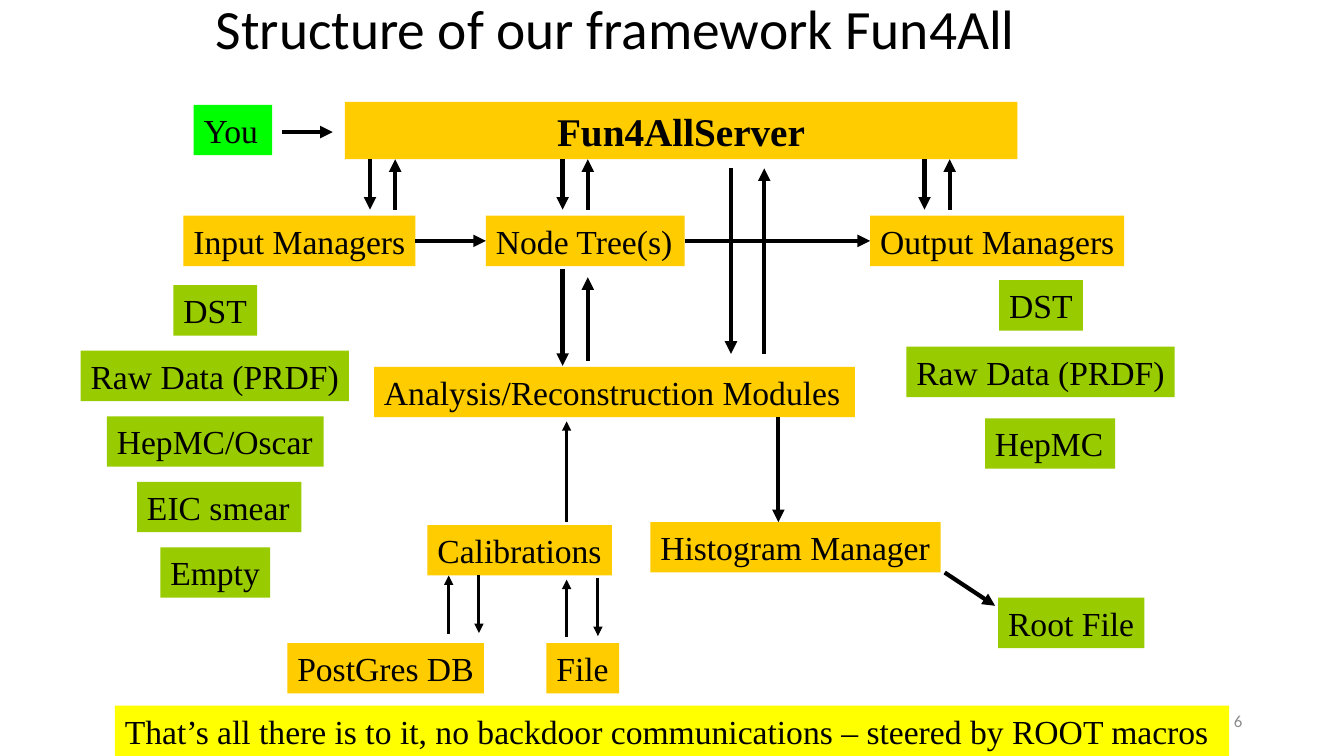
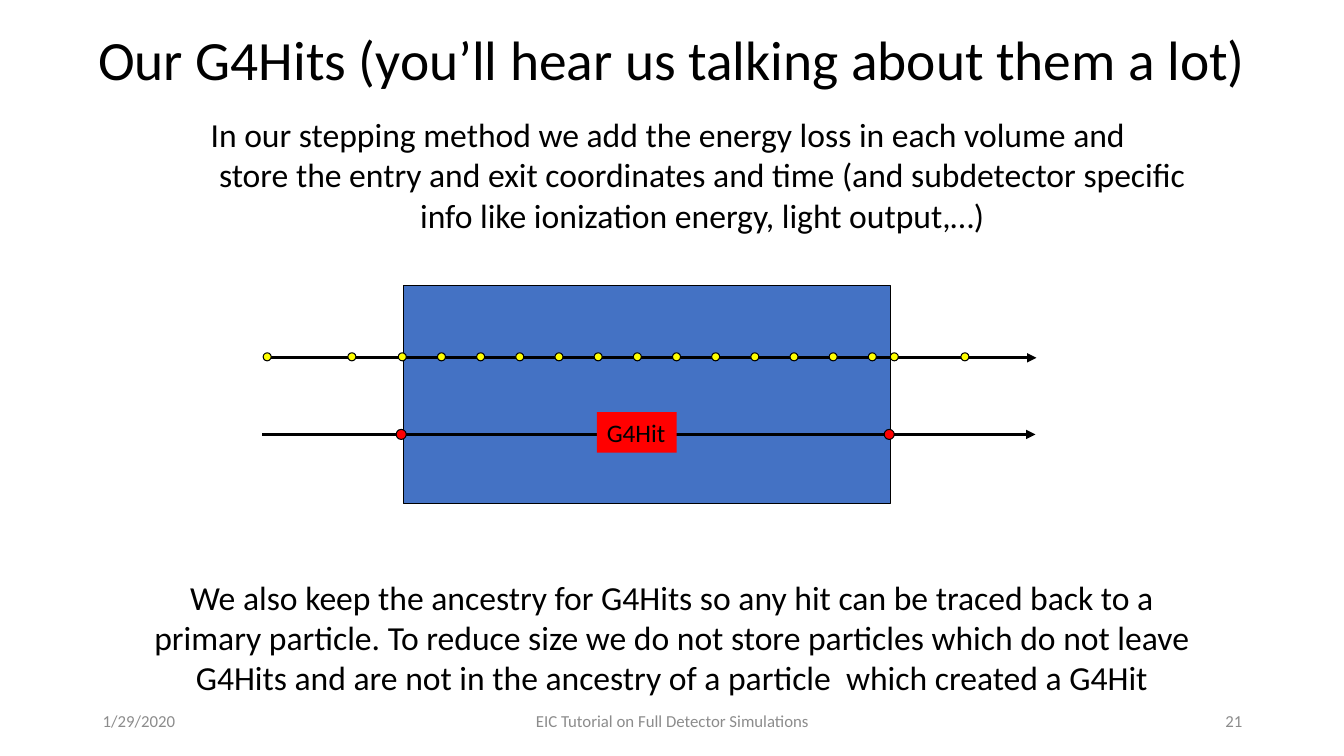
import pptx
import pptx.dml.color
import pptx.enum.shapes
import pptx.enum.text
import pptx.oxml
import pptx.oxml.ns
import pptx.util

ALIGN = pptx.enum.text.PP_ALIGN
SHAPE = pptx.enum.shapes.MSO_SHAPE

# Shared look
PX = 9144  # EMU per px, 100 px to the inch
SLIDE_W, SLIDE_H = 1333, 750
SANS, SERIF = "Calibri", "Times New Roman"
BLACK, GREY, RED, YELLOW = "000000", "8C8C8C", "FF0000", "FFFF00"
ORANGE, OLIVE, GREEN, BLUE = "FFCC00", "99CC00", "00FF00", "4472C4"
BOX_H = 50
FOOTER_TOP, FOOTER_H = 695, 40
FOOTER_SLOTS = {  # left, width, alignment
    "date": (92, 300, ALIGN.LEFT),
    "talk": (442, 450, ALIGN.CENTER),
    "number": (942, 300, ALIGN.RIGHT),
}

# Slide 1: framework diagram
FRAMEWORK_TITLE = "Structure of our framework Fun4All"
SERVER = ("Fun4AllServer", 342, 101, 667, 57)
BOXES = {  # fill: (text, left, top, width)
    YELLOW: [("That’s all there is to it, no backdoor communications – "
              "steered by ROOT macros", 114, 700, 1105)],
    GREEN: [("You", 192, 104, 78)],
    ORANGE: [
        ("Input Managers", 182, 214, 230),
        ("Node Tree(s)", 482, 214, 197),
        ("Output Managers", 863, 214, 252),
        ("Analysis/Reconstruction Modules", 371, 364, 477),
        ("Histogram Manager", 645, 518, 288),
        ("Calibrations", 424, 521, 183),
        ("PostGres DB", 285, 638, 195),
        ("File", 542, 638, 72),
    ],
    OLIVE: [
        ("DST", 991, 278, 83),
        ("Raw Data (PRDF)", 899, 344, 266),
        ("HepMC", 977, 415, 129),
        ("Root File", 990, 593, 145),
    ],
}
INPUT_FORMATS = [  # text, left, width
    ("DST", 172, 83),
    ("Raw Data (PRDF)", 80, 266),
    ("HepMC/Oscar", 106, 215),
    ("EIC smear", 136, 163),
    ("Empty", 159, 109),
]
INPUT_TOP, INPUT_STEP = 283, 65
DATA_FLOW = ["Input Managers", "Node Tree(s)", "Output Managers"]
SERVER_LINKS = [367, 558, 917]  # x of each downward arrow
LINK_TOP, LINK_BOTTOM, LINK_GAP = 158, 208, 25
HEAVY_ARROWS = [  # x1, y1, x2, y2
    (280, 131, 330, 131),
    (558, 267, 558, 363),
    (583, 358, 583, 275),
    (725, 167, 725, 351),
    (758, 351, 758, 167),
    (772, 414, 772, 518),
    (937, 568, 987, 601),
]
LIGHT_ARROWS = [
    (562, 518, 562, 418),
    (445, 629, 445, 571),
    (475, 570, 475, 628),
    (562, 632, 562, 575),
    (593, 573, 593, 631),
]

# Slide 2: hits along a track
HITS_TITLE = "Our G4Hits (you’ll hear us talking about them a lot)"
STEPPING = [
    ("In our stepping method we add the energy loss in each volume and", ALIGN.LEFT),
    ("store the entry and exit coordinates and time (and subdetector specific "
     "info like ionization energy, light output,…)", ALIGN.CENTER),
]
ANCESTRY = [
    ("We also keep the ancestry for G4Hits so any hit can be traced back to a "
     "primary particle. To reduce size we do not store particles which do not "
     "leave G4Hits and are not in the ancestry of a particle  which created a G4Hit",
     ALIGN.CENTER),
]
VOLUME = (400, 283, 483, 217)
TRACKS = [(261, 355, 1028, 355), (260, 431, 1027, 431)]
STEPS_INSIDE, STEP_START, STEP_GAP = 13, 395, 38.85
STEP_LEFTS = [261, 345, *(STEP_START + i * STEP_GAP for i in range(STEPS_INSIDE)), 883, 953]
HIT_LEFTS = [393, 877]


def px(value):
    return pptx.util.Emu(round(value * PX))


def rgb(code):
    return pptx.dml.color.RGBColor.from_string(code)


def style(paragraph, size, face, color=BLACK, align=ALIGN.LEFT, bold=False):
    paragraph.alignment = align
    font = paragraph.font
    font.size, font.name, font.bold = pptx.util.Pt(size), face, bold
    font.color.rgb = rgb(color)


def add_title(slide, text, place, align):
    title = slide.shapes.title
    title.left, title.top, title.width, title.height = map(px, place)
    frame = title.text_frame
    frame.text = text
    frame.auto_size = pptx.enum.text.MSO_AUTO_SIZE.NONE
    frame.vertical_anchor = pptx.enum.text.MSO_ANCHOR.MIDDLE
    style(frame.paragraphs[0], 39.6, SANS, align=align)
    frame.paragraphs[0].line_spacing = 0.9


def add_text(slide, place, items, size, color=BLACK, anchor="TOP"):
    frame = slide.shapes.add_textbox(*map(px, place)).text_frame
    frame.word_wrap = True
    frame.vertical_anchor = pptx.enum.text.MSO_ANCHOR[anchor]
    for i, (text, align) in enumerate(items):
        paragraph = frame.paragraphs[0] if i == 0 else frame.add_paragraph()
        paragraph.text = text
        style(paragraph, size, SANS, color, align)


def add_footer(slide, **texts):
    for slot, text in texts.items():
        left, width, align = FOOTER_SLOTS[slot]
        add_text(slide, (left, FOOTER_TOP, width, FOOTER_H), [(text, align)],
                 12, GREY, "MIDDLE")


def add_filled(slide, kind, place, fill, outlined=False):
    shape = slide.shapes.add_shape(kind, *map(px, place))
    shape.shadow.inherit = False
    shape.fill.solid()
    shape.fill.fore_color.rgb = rgb(fill)
    if outlined:
        shape.line.color.rgb = rgb(BLACK)
        shape.line.width = pptx.util.Pt(0.75)
    else:
        shape.line.fill.background()
    return shape


def add_label(slide, text, place, fill, size=24, face=SERIF, align=ALIGN.LEFT, bold=False):
    shape = add_filled(slide, SHAPE.RECTANGLE, place, fill)
    frame = shape.text_frame
    frame.word_wrap = True
    if align == ALIGN.LEFT:
        frame.margin_right = 0
    frame.text = text
    style(frame.paragraphs[0], size, face, align=align, bold=bold)
    return shape


def add_arrow(slide, ends, weight):
    arrow = slide.shapes.add_connector(
        pptx.enum.shapes.MSO_CONNECTOR.STRAIGHT, *map(px, ends))
    arrow.line.color.rgb = rgb(BLACK)
    arrow.line.width = pptx.util.Pt(weight)
    head = pptx.oxml.parse_xml(
        f'<a:tailEnd {pptx.oxml.ns.nsdecls("a")} type="triangle"/>')
    arrow.line._get_or_add_ln().append(head)
    arrow._element.spPr.append(
        pptx.oxml.parse_xml(f'<a:effectLst {pptx.oxml.ns.nsdecls("a")}/>'))
    return arrow


def build_framework(slide):
    add_title(slide, FRAMEWORK_TITLE, (204, 4, 925, 54), ALIGN.LEFT)

    # Boxes
    name, *place = SERVER
    add_label(slide, name, place, ORANGE, 28, align=ALIGN.CENTER, bold=True)
    boxes = {}
    for fill, labels in BOXES.items():
        for text, left, top, width in labels:
            boxes[text] = add_label(slide, text, (left, top, width, BOX_H), fill)
    for i, (text, left, width) in enumerate(INPUT_FORMATS):
        add_label(slide, text, (left, INPUT_TOP + i * INPUT_STEP, width, BOX_H), OLIVE)

    # Data flow from input to output
    for source, target in zip(DATA_FLOW, DATA_FLOW[1:]):
        arrow = add_arrow(slide, (0, 0, 0, 0), 3)
        arrow.begin_connect(boxes[source], 3)
        arrow.end_connect(boxes[target], 1)

    # Calls to and from the server, then the remaining arrows
    for x in SERVER_LINKS:
        add_arrow(slide, (x, LINK_TOP, x, LINK_BOTTOM), 3)
        add_arrow(slide, (x + LINK_GAP, LINK_BOTTOM, x + LINK_GAP, LINK_TOP), 3)
    for weight, arrows in ((3, HEAVY_ARROWS), (2.25, LIGHT_ARROWS)):
        for ends in arrows:
            add_arrow(slide, ends, weight)
    add_footer(slide, number="6")


def build_hits(slide):
    add_title(slide, HITS_TITLE, (51, 0, 1231, 125), ALIGN.CENTER)
    add_text(slide, (199, 108, 995, 131), STEPPING, 24)
    add_text(slide, (139, 567, 1055, 131), ANCESTRY, 24)

    # Volume crossed by two tracks
    add_filled(slide, SHAPE.RECTANGLE, VOLUME, BLUE, outlined=True)
    for ends in TRACKS:
        add_arrow(slide, ends, 2.25)

    # Steps on the upper track, entry and exit on the lower one
    for lefts, top, size, fill in ((STEP_LEFTS, 350, 8, YELLOW), (HIT_LEFTS, 426, 10, RED)):
        for left in lefts:
            add_filled(slide, SHAPE.OVAL, (left, top, size, size), fill, outlined=True)
    add_label(slide, "G4Hit", (592, 409, 79, 40), RED, 18, SANS)
    add_footer(slide, date="1/29/2020", talk="EIC Tutorial on Full Detector Simulations",
               number="21")


def main():
    deck = pptx.Presentation()
    deck.slide_width, deck.slide_height = px(SLIDE_W), px(SLIDE_H)
    title_only = deck.slide_layouts[5]
    for build in (build_framework, build_hits):
        build(deck.slides.add_slide(title_only))
    deck.save("out.pptx")


if __name__ == "__main__":
    main()
